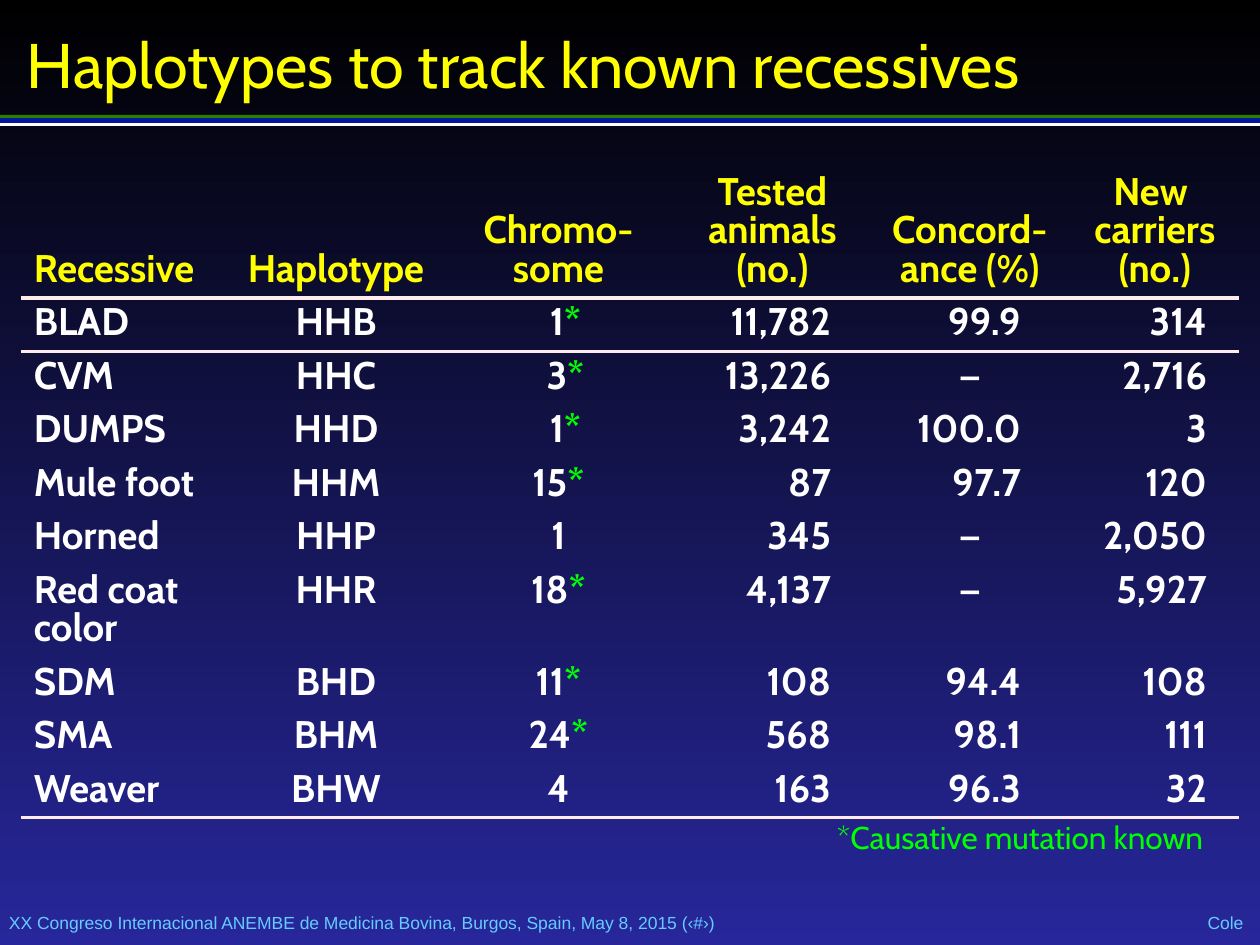
from lxml import etree
from pptx import Presentation
from pptx.dml.color import RGBColor
from pptx.enum.shapes import MSO_SHAPE
from pptx.enum.text import MSO_ANCHOR, MSO_AUTO_SIZE, PP_ALIGN
from pptx.oxml.ns import qn
from pptx.util import Pt

LEFT, MID, RIGHT = PP_ALIGN.LEFT, PP_ALIGN.CENTER, PP_ALIGN.RIGHT
MIDDLE, BOTTOM, TOP = MSO_ANCHOR.MIDDLE, MSO_ANCHOR.BOTTOM, MSO_ANCHOR.TOP
RECT, FIXED = MSO_SHAPE.RECTANGLE, MSO_AUTO_SIZE.NONE

SCALE = 914400 // 126  # EMU in one px
PLAIN = "{2D5ABB26-0587-4C30-8999-92F81FD0307C}"  # table style without grid
COLORS = {
    "black": "000000", "navy": "27279B", "green": "2A7E00", "blue": "001799",
    "white": "FFFFFF", "yellow": "FFFF00", "lime": "00FF00", "sky": "66CCFF",
    "rule": "FFEBEB",
}
SIDES = ("left", "top", "right", "bottom")

HEADS = ["Recessive", "Haplotype", "Chromo-some", "Tested\nanimals\n(no.)",
         "Concord-\nance (%)", "New \ncarriers\n(no.)"]
ROWS = [
    ["BLAD", "HHB", "1*", "11,782", "99.9", "314"],
    ["CVM", "HHC", "3*", "13,226", "—", "2,716"],
    ["DUMPS", "HHD", "1*", "3,242", "100.0", "3"],
    ["Mule foot", "HHM", "15*", "87", "97.7", "120"],
    ["Horned", "HHP", "1", "345", "—", "2,050"],
    ["Red coat color", "HHR", "18*", "4,137", "—", "5,927"],
    ["SDM", "BHD", "11*", "108", "94.4", "108"],
    ["SMA", "BHM", "24*", "568", "98.1", "111"],
    ["Weaver", "BHW", "4", "163", "96.3", "32"],
]
WIDTHS = [210, 210, 235, 193, 202, 168]
ALIGNS = [LEFT, MID, MID, RIGHT, RIGHT, RIGHT]
PADS = [13, 13, 13, 38, 50, 32]  # right inset of each body column


def px(n):
    return n * SCALE


def rgb(name):
    return RGBColor.from_string(COLORS[name])


def style(item, values):
    for key, value in values.items():
        setattr(item, key, value)


def inset(item, pads):
    style(item, {f"margin_{side}": px(n) for side, n in zip(SIDES, pads)})


def write(para, text, color, font, form):
    """Add one run, then format its paragraph."""
    run = para.add_run()
    run.text = text
    style(run.font, font)
    run.font.color.rgb = rgb(color)
    style(para, form)


def paint(slide):
    fill = slide.background.fill
    fill.gradient()
    fill.gradient_angle = 270
    for stop, place, name in zip(fill.gradient_stops, (0, 1), ("black", "navy")):
        stop.position = place
        stop.color.rgb = rgb(name)


def add_bar(slide, top, high, color):
    bar = slide.shapes.add_shape(RECT, 0, px(top), px(1260), px(high))
    bar.shadow.inherit = False
    bar.fill.solid()
    bar.fill.fore_color.rgb = rgb(color)
    bar.line.fill.background()


def add_label(slide, box, text, color, font, form, pads=(0, 0, 0, 0), wrap=True):
    frame = slide.shapes.add_textbox(*map(px, box)).text_frame
    style(frame, {"word_wrap": wrap, "vertical_anchor": MIDDLE})
    inset(frame, pads)
    write(frame.paragraphs[0], text, color, font, form)


def add_title(slide, text):
    title = slide.shapes.title
    style(title, dict(zip(("left", "top", "width", "height"),
                          map(px, (21, 21, 1218, 84)))))
    frame = title.text_frame
    style(frame, {"auto_size": FIXED, "vertical_anchor": MIDDLE, "word_wrap": True})
    inset(frame, (6, 6, 6, 6))
    write(frame.paragraphs[0], text, "yellow",
          {"name": "Cabin", "size": Pt(36)}, {"alignment": LEFT})


def add_rule(cell, tag):
    """Draw a line on one edge of a cell."""
    line = etree.Element(qn(tag), w=str(Pt(2.25)))
    fill = etree.SubElement(line, qn("a:solidFill"))
    etree.SubElement(fill, qn("a:srgbClr"), val=COLORS["rule"])
    cell._tc.get_or_add_tcPr().insert(0, line)


def fill_cell(cell, text, color, align, anchor, pads):
    cell.fill.background()
    cell.vertical_anchor = anchor
    inset(cell, pads)
    font = {"name": "Cabin", "size": Pt(22), "bold": True}
    form = {"alignment": align, "line_spacing": Pt(22)}
    frame = cell.text_frame
    for i, line in enumerate(text.split("\n")):
        para = frame.add_paragraph() if i else frame.paragraphs[0]
        write(para, line.rstrip("*"), color, font, form)
        if line.endswith("*"):
            write(para, "*", "lime", font, form)


def add_grid(slide):
    frame = slide.shapes.add_table(len(ROWS) + 1, len(HEADS), px(21), px(170),
                                   px(sum(WIDTHS)), px(649))
    table = frame.table
    style(table, {"first_row": False, "horz_banding": False})
    table._tbl.tblPr.find(qn("a:tableStyleId")).text = PLAIN
    for col, wide in zip(table.columns, WIDTHS):
        col.width = px(wide)
    for r, row in enumerate(table.rows):
        row.height = px(53 if r else 128)

    # Header
    for c, text in enumerate(HEADS):
        cell = table.cell(0, c)
        fill_cell(cell, text, "yellow", MID if c else LEFT, BOTTOM, (13, 6, 13, 6))
        add_rule(cell, "a:lnB")

    # Body
    for r, row in enumerate(ROWS, 1):
        for c, text in enumerate(row):
            cell = table.cell(r, c)
            dash = text == "—"
            # A starred single digit lines up with the units of the others
            left = 27 if text.endswith("*") and len(text) == 2 else 13
            fill_cell(cell, text, "white", MID if dash else ALIGNS[c], TOP,
                      (left, 9, 13 if dash else PADS[c], 6))
            if r == 1:
                add_rule(cell, "a:lnT")
            if r == len(ROWS):
                add_rule(cell, "a:lnB")


def main():
    deck = Presentation()
    style(deck, {"slide_width": px(1260), "slide_height": px(945)})
    slide = deck.slides.add_slide(deck.slide_layouts[5])
    paint(slide)

    # Stripes under the title
    for top, high, color in ((115, 4, "green"), (122, 4, "white"), (118, 5, "blue")):
        add_bar(slide, top, high, color)
    add_title(slide, "Haplotypes to track known recessives")

    # Table and its note
    add_grid(slide)
    add_label(slide, (824, 812, 414, 50), "*Causative mutation known", "lime",
              {"name": "Cabin", "size": Pt(18)}, {"alignment": LEFT},
              (13, 6, 13, 6), False)

    # Footer
    small = {"name": "Arial", "size": Pt(10)}
    add_label(slide, (9, 912, 1019, 21),
              "XX Congreso Internacional ANEMBE de Medicina Bovina, Burgos, "
              "Spain, May 8, 2015 (‹#›)", "sky", small,
              {"alignment": LEFT, "space_before": Pt(6)})
    add_label(slide, (1207, 912, 37, 21), "Cole", "sky", small,
              {"alignment": MID, "space_before": Pt(6)}, wrap=False)
    deck.save("out.pptx")


if __name__ == "__main__":
    main()
